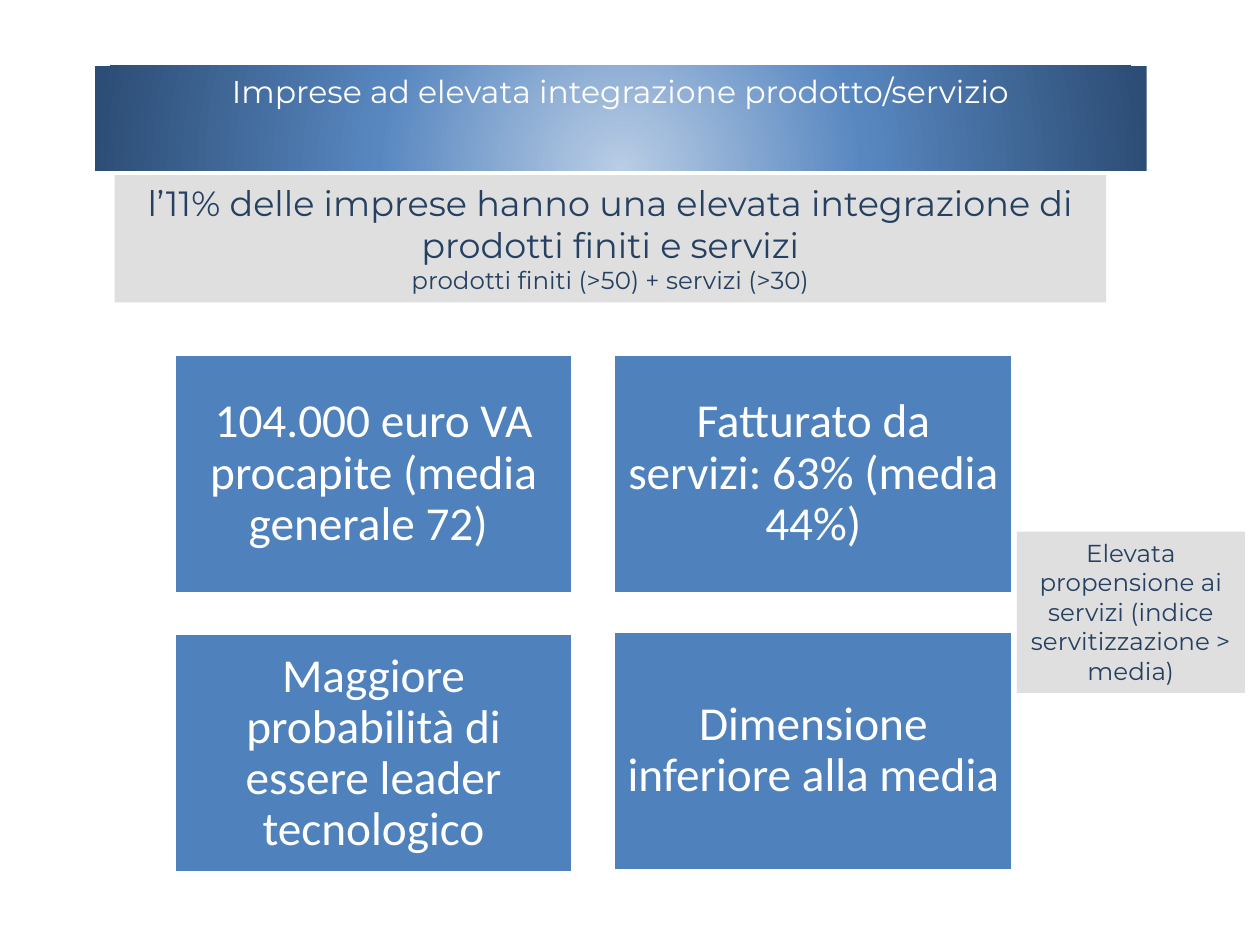
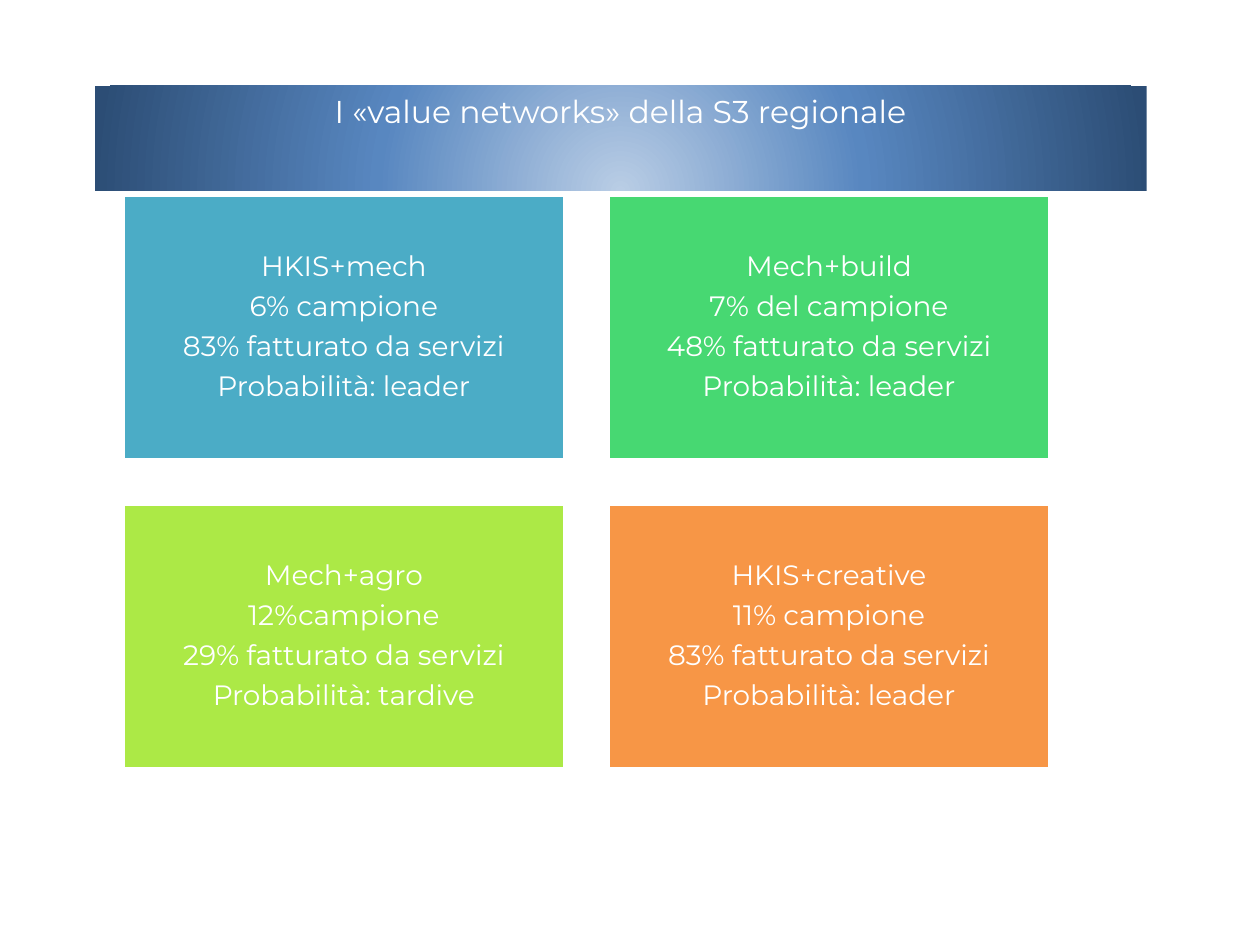
from pptx import Presentation
from pptx.dml.color import RGBColor
from pptx.enum.shapes import MSO_SHAPE
from pptx.enum.text import MSO_ANCHOR, MSO_AUTO_SIZE, PP_ALIGN
from pptx.oxml import parse_xml
from pptx.oxml.ns import nsdecls, qn
from pptx.util import Inches, Pt
from lxml import etree

RECT = MSO_SHAPE.RECTANGLE
TOP, MIDDLE = MSO_ANCHOR.TOP, MSO_ANCHOR.MIDDLE
CENTER = PP_ALIGN.CENTER
NONE, GROW = MSO_AUTO_SIZE.NONE, MSO_AUTO_SIZE.SHAPE_TO_FIT_TEXT

WHITE = RGBColor(0xFF, 0xFF, 0xFF)
NAVY = RGBColor(0x25, 0x40, 0x61)
GRAY = RGBColor(0xBF, 0xBF, 0xBF)
BLUE = RGBColor(0x4F, 0x81, 0xBD)
TEAL = RGBColor(0x4B, 0xAC, 0xC6)
GREEN = RGBColor(0x47, 0xD8, 0x72)
LIME = RGBColor(0xAC, 0xE9, 0x46)
ORANGE = RGBColor(0xF7, 0x96, 0x46)
BAND = ((0, RGBColor(0xB9, 0xCD, 0xE5)), (46, RGBColor(0x58, 0x87, 0xC0)),
        (100, RGBColor(0x2C, 0x4D, 0x75)))
FONT = "Montserrat"


def write(shape, lines, sizes, font=FONT, color=WHITE, anchor=TOP,
          fit=GROW, inset=None, spacing=None, after=0):
    """Fill a shape with centred lines, one size for each line."""
    frame = shape.text_frame
    frame.word_wrap = True
    frame.auto_size = fit
    frame.vertical_anchor = anchor
    if inset:
        frame.margin_left = frame.margin_right = Inches(inset)
        frame.margin_top = frame.margin_bottom = Inches(inset)
    frame.text = "\n".join(lines)
    for para, size in zip(frame.paragraphs, sizes):
        para.alignment = CENTER
        para.line_spacing = spacing
        para.space_before = Pt(0)
        para.space_after = Pt(size * after)
        run = para.runs[0].font
        run.name, run.size, run.color.rgb = font, Pt(size), color


def box(slide, at, fill, alpha=None):
    """Add a rectangle: outlined in white, or see-through without a line."""
    shape = slide.shapes.add_shape(RECT, *[Inches(n) for n in at])
    shape.shadow.inherit = False
    shape.fill.solid()
    shape.fill.fore_color.rgb = fill
    if alpha is None:
        shape.line.color.rgb = WHITE
        shape.line.width = Pt(2)
    else:
        shape.line.fill.background()
        tint = shape._element.spPr.find(qn("a:solidFill"))[0]
        etree.SubElement(tint, qn("a:alpha"), val=str(alpha * 1000))
    return shape


deck = Presentation()
deck.slide_width, deck.slide_height = Inches(10), Inches(7.5)

# Title bands shared by both slides
stops = "".join(f'<a:gs pos="{pos * 1000}"><a:srgbClr val="{tone}"/></a:gs>'
                for pos, tone in BAND)
slides = []
for text, top in (("Imprese ad elevata integrazione prodotto/servizio", 0.52),
                  ("I «value networks» della S3 regionale", 0.68)):
    slide = deck.slides.add_slide(deck.slide_layouts[5])
    title = slide.shapes.title
    title.left, title.top = Inches(0.75), Inches(top)
    title.width, title.height = Inches(8.35), Inches(0.4)
    title._element.spPr.append(parse_xml(
        f'<a:gradFill {nsdecls("a")}><a:gsLst>{stops}</a:gsLst>'
        '<a:path path="circle"><a:fillToRect l="50000" t="130000" '
        'r="50000" b="-30000"/></a:path></a:gradFill>'))
    write(title, [text], [18])
    slides.append(slide)
first, second = slides

# Slide 1: key finding
finding = box(first, (0.91, 1.39, 7.87, 1.01), GRAY, alpha=49)
write(finding, ["l’11% delle imprese hanno una elevata integrazione di "
                "prodotti finiti e servizi",
                "prodotti finiti (>50) + servizi (>30)"], [20, 14], color=NAVY)

# Slide 1: grid of traits, the last one set slightly higher
traits = (("104.000 euro VA procapite (media generale 72) ", 2.81),
          ("Fatturato da servizi: 63% (media 44%)", 2.81),
          ("Maggiore probabilità di essere leader tecnologico", 5.03),
          ("Dimensione inferiore alla media", 5.01))
for i, (text, top) in enumerate(traits):
    trait = box(first, (1.38 + i % 2 * 3.49, top, 3.17, 1.9), BLUE)
    write(trait, [text], [27], font="Calibri", anchor=MIDDLE, fit=NONE,
          inset=0.11, spacing=0.9, after=0.35)

# Slide 1: side note
note = box(first, (8.07, 4.22, 1.81, 1.28), GRAY, alpha=49)
write(note, ["Elevata propensione ai servizi (indice servitizzazione > media)"],
      [14], color=NAVY)

# Slide 2: grid of networks
nets = (
    (TEAL, "HKIS+mech", "6% campione", 83, "leader"),
    (GREEN, "Mech+build", "7% del campione", 48, "leader"),
    (LIME, "Mech+agro", "12%campione", 29, "tardive"),
    (ORANGE, "HKIS+creative", "11% campione", 83, "leader"),
)
for i, (fill, name, share, sales, role) in enumerate(nets):
    row, col = divmod(i, 2)
    net = box(second, (0.98 + col * 3.85, 1.55 + row * 2.45, 3.5, 2.1), fill)
    write(net, [name, share, f"{sales}% fatturato da servizi",
                f"Probabilità: {role}"], [16] * 4, anchor=MIDDLE, fit=NONE,
          inset=0.07, spacing=0.9, after=0.35)

deck.save("out.pptx")
